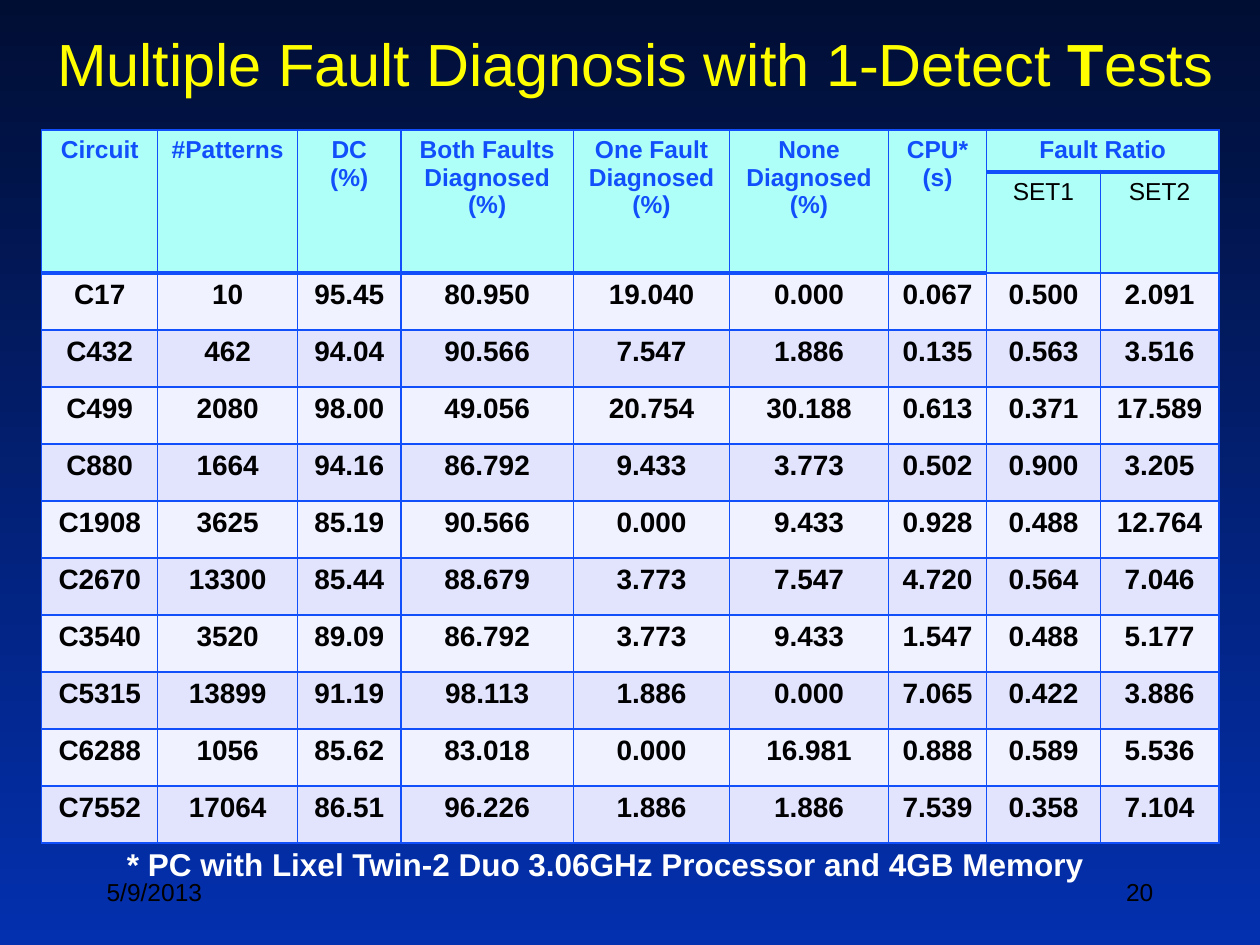
from dataclasses import dataclass

from lxml.etree import SubElement
from pptx import Presentation
from pptx.dml.color import RGBColor
from pptx.enum.text import MSO_ANCHOR, PP_ALIGN
from pptx.oxml.ns import qn
from pptx.util import Cm, Pt


@dataclass(frozen=True)
class Theme:
    font: str = "Arial"
    sky_top: str = "010E34"
    sky_bottom: str = "0330AF"
    title: str = "FFFF00"
    line: str = "114FFB"
    header: str = "AEFFF7"
    bands: tuple = ("F1F2FF", "E2E4FE")
    dark: str = "000000"
    light: str = "FFFFFF"
    title_size: int = 34
    note_size: int = 18
    body_size: int = 16
    small_size: int = 14
    thin: int = 1
    thick: int = 3


THEME = Theme()

COLUMN_WIDTHS = (2.34, 2.82, 2.08, 3.48, 3.15, 3.2, 1.98, 2.29, 2.39)
HEADER_HEIGHTS = (0.81, 1.92)
DATA_HEIGHT = 1.15
HEADERS = ("Circuit", "#Patterns", "DC\n(%)", "Both Faults Diagnosed (%)",
           "One Fault Diagnosed (%)", "None Diagnosed (%)", "CPU* (s)")
RATIO_HEADERS = ("SET1", "SET2")
RESULTS = (
    ("C17", "10", "95.45", "80.950", "19.040", "0.000", "0.067", "0.500", "2.091"),
    ("C432", "462", "94.04", "90.566", "7.547", "1.886", "0.135", "0.563", "3.516"),
    ("C499", "2080", "98.00", "49.056", "20.754", "30.188", "0.613", "0.371", "17.589"),
    ("C880", "1664", "94.16", "86.792", "9.433", "3.773", "0.502", "0.900", "3.205"),
    ("C1908", "3625", "85.19", "90.566", "0.000", "9.433", "0.928", "0.488", "12.764"),
    ("C2670", "13300", "85.44", "88.679", "3.773", "7.547", "4.720", "0.564", "7.046"),
    ("C3540", "3520", "89.09", "86.792", "3.773", "9.433", "1.547", "0.488", "5.177"),
    ("C5315", "13899", "91.19", "98.113", "1.886", "0.000", "7.065", "0.422", "3.886"),
    ("C6288", "1056", "85.62", "83.018", "0.000", "16.981", "0.888", "0.589", "5.536"),
    ("C7552", "17064", "86.51", "96.226", "1.886", "1.886", "7.539", "0.358", "7.104"),
)


def style_paragraph(para, size, color, bold=False, align=PP_ALIGN.LEFT):
    para.alignment = align
    para.font.name = THEME.font
    para.font.size = Pt(size)
    para.font.bold = bold
    para.font.color.rgb = RGBColor.from_string(color)


def add_text(page, box, spans, size, color, bold=False,
             align=PP_ALIGN.LEFT, anchor=MSO_ANCHOR.TOP):
    """Place one line made of (text, is_bold) spans in the box."""
    frame = page.shapes.add_textbox(*map(Cm, box)).text_frame
    frame.word_wrap = True
    frame.vertical_anchor = anchor
    para = frame.paragraphs[0]
    style_paragraph(para, size, color, bold, align)
    for text, is_bold in spans:
        span = para.add_run()
        span.text = text
        if is_bold != bold:
            span.font.bold = is_bold


def paint_background(page):
    fill = page.background.fill
    fill.gradient()
    fill.gradient_angle = 270
    for stop, color, position in zip(fill.gradient_stops,
                                     (THEME.sky_top, THEME.sky_bottom), (0, 1)):
        stop.color.rgb = RGBColor.from_string(color)
        stop.position = position


def has_thick_bottom(row, column):
    """The main headers close at row 1, the ratio header at row 0."""
    return row == (1 if column < len(HEADERS) else 0)


def draw_borders(cell, row, column):
    top = THEME.thick if has_thick_bottom(row - 1, column) else THEME.thin
    bottom = THEME.thick if has_thick_bottom(row, column) else THEME.thin
    if row == 0:
        bottom = THEME.thick
    properties = cell._tc.get_or_add_tcPr()
    widths = {"lnL": THEME.thin, "lnR": THEME.thin, "lnT": top, "lnB": bottom}
    for side, width in widths.items():
        line = SubElement(properties, qn(f"a:{side}"), w=str(Pt(width)))
        fill = SubElement(line, qn("a:solidFill"))
        SubElement(fill, qn("a:srgbClr"), val=THEME.line)


def write_cell(cell, text, size, color, bold=True):
    cell.text = text
    for para in cell.text_frame.paragraphs:
        style_paragraph(para, size, color, bold, PP_ALIGN.CENTER)


def add_results_table(page, left, top):
    heights = HEADER_HEIGHTS + (DATA_HEIGHT,) * len(RESULTS)
    table = page.shapes.add_table(
        len(heights), len(COLUMN_WIDTHS), Cm(left), Cm(top),
        Cm(sum(COLUMN_WIDTHS)), Cm(sum(heights))).table
    table.first_row = table.horz_banding = False
    for column, width in zip(table.columns, COLUMN_WIDTHS):
        column.width = Cm(width)
    for row, height in zip(table.rows, heights):
        row.height = Cm(height)

    # Borders and fills
    first_data = len(HEADER_HEIGHTS)
    for row in range(len(heights)):
        band = THEME.header if row < first_data else THEME.bands[row % 2]
        for column in range(len(COLUMN_WIDTHS)):
            cell = table.cell(row, column)
            draw_borders(cell, row, column)
            cell.fill.solid()
            cell.fill.fore_color.rgb = RGBColor.from_string(band)

    # Header cells
    ratio_column = len(HEADERS)
    for column, text in enumerate(HEADERS):
        table.cell(0, column).merge(table.cell(1, column))
        write_cell(table.cell(0, column), text, THEME.small_size, THEME.line)
    table.cell(0, ratio_column).merge(table.cell(0, ratio_column + 1))
    write_cell(table.cell(0, ratio_column), "Fault Ratio",
               THEME.small_size, THEME.line)
    for column, text in enumerate(RATIO_HEADERS, ratio_column):
        write_cell(table.cell(1, column), text, THEME.small_size, THEME.dark, False)

    # Data cells
    for row, values in enumerate(RESULTS, first_data):
        for column, text in enumerate(values):
            write_cell(table.cell(row, column), text, THEME.body_size, THEME.dark)


def add_footer(page, left, top, width, height):
    """Date at the left end, page number at the right end."""
    part = 5.28
    for offset, text, align in ((0, "5/9/2013", PP_ALIGN.LEFT),
                                (width - part, "20", PP_ALIGN.RIGHT)):
        add_text(page, (left + offset, top, part, height), [(text, False)],
                 THEME.small_size, THEME.dark, align=align,
                 anchor=MSO_ANCHOR.MIDDLE)


def main():
    deck = Presentation()
    deck.slide_width, deck.slide_height = Cm(25.4), Cm(19.05)
    page = deck.slides.add_slide(deck.slide_layouts[6])
    paint_background(page)

    # Title
    add_text(page, (0.84, 0.43, 23.93, 3.18),
             [("Multiple Fault Diagnosis with 1-Detect ", False),
              ("T", True), ("ests", False)],
             THEME.title_size, THEME.title, align=PP_ALIGN.CENTER)

    add_results_table(page, 0.84, 2.62)

    # Footnote
    add_text(page, (2.31, 16.92, 20.07, 1.02),
             [("* PC with Lixel Twin-2 Duo 3.06GHz Processor and 4GB Memory", True)],
             THEME.note_size, THEME.light, bold=True)

    add_footer(page, 1.9, 17.35, 21.6, 1.27)
    deck.save("out.pptx")


if __name__ == "__main__":
    main()
